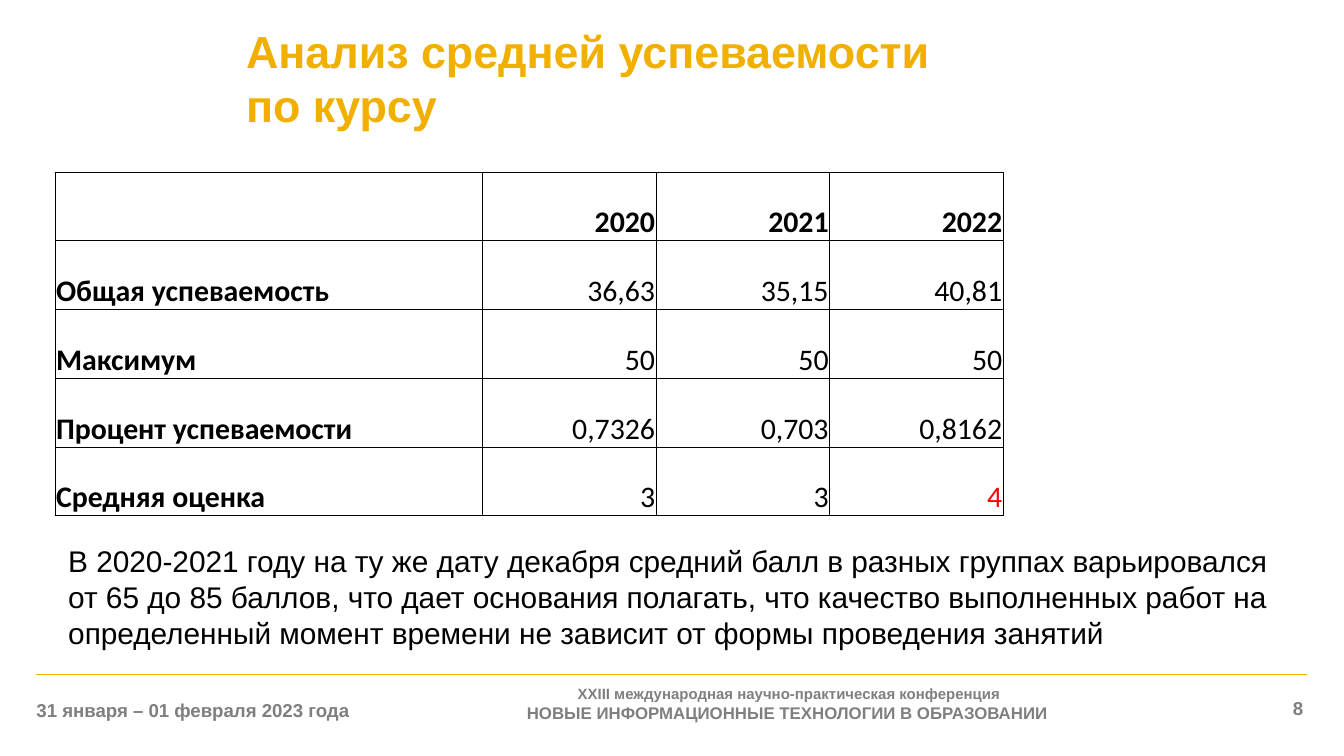
from lxml import etree
from pptx import Presentation
from pptx.dml.color import RGBColor
from pptx.enum.shapes import MSO_CONNECTOR
from pptx.enum.text import MSO_ANCHOR, PP_ALIGN
from pptx.oxml import parse_xml
from pptx.oxml.ns import nsdecls, qn
from pptx.util import Cm, Pt

LEFT, CENTER, RIGHT = PP_ALIGN.LEFT, PP_ALIGN.CENTER, PP_ALIGN.RIGHT
TOP, MIDDLE, BOTTOM = MSO_ANCHOR.TOP, MSO_ANCHOR.MIDDLE, MSO_ANCHOR.BOTTOM
STRAIGHT = MSO_CONNECTOR.STRAIGHT

THEME = {
    "accent": "F1AF00", "text": "000000", "footer": "7F7F7F", "highlight": "FF0000",
    "font": "Arial", "table_font": "Calibri",
    "title_size": 24, "body_size": 16, "footer_size": 10,
    "conference_size": 8, "topic_size": 9,
}


def write(frame, lines, color, font=THEME["font"], bold=False, align=LEFT):
    """Fill one paragraph with (text, size) lines parted by line breaks."""
    paragraph = frame.paragraphs[0]
    paragraph.alignment = align
    for index, (text, size) in enumerate(lines):
        if index:
            paragraph.add_line_break()
        run = paragraph.add_run()
        run.text = text
        for name, value in {"name": font, "size": Pt(size), "bold": bold}.items():
            setattr(run.font, name, value)
        run.font.color.rgb = RGBColor.from_string(color)


def format_frame(frame, anchor, side, vertical):
    values = {
        "word_wrap": True, "vertical_anchor": anchor,
        "margin_left": Cm(side), "margin_right": Cm(side),
        "margin_top": Cm(vertical), "margin_bottom": Cm(vertical),
    }
    for name, value in values.items():
        setattr(frame, name, value)


presentation = Presentation()
presentation.slide_width, presentation.slide_height = Cm(25.4), Cm(14.29)
slide = presentation.slides.add_slide(presentation.slide_layouts[5])

# Footer rule
rule = slide.shapes.add_connector(STRAIGHT, Cm(0.69), Cm(12.75), Cm(24.71), Cm(12.75))
rule.line.color.rgb = RGBColor.from_string(THEME["accent"])
rule.line.width = Pt(0.75)
etree.SubElement(rule._element.spPr, qn("a:effectLst"))

# Title
title = slide.shapes.title
title.left, title.top, title.width, title.height = Cm(4.5), Cm(0.43), Cm(19.2), Cm(2.06)
format_frame(title.text_frame, MIDDLE, 0.15, 0)
title_lines = [(line, THEME["title_size"])
               for line in ("Анализ средней успеваемости ", "по курсу")]
write(title.text_frame, title_lines, THEME["accent"], bold=True)

# Footer: date, conference, slide number
footers = [
    ((0.69, 13.21, 5.99, 0.43), MIDDLE, LEFT,
     [("31 января – 01 февраля 2023 года", THEME["footer_size"])]),
    ((6.71, 12.95, 16.41, 0.74), TOP, CENTER,
     [("XXIII международная научно-практическая конференция", THEME["conference_size"]),
      ("НОВЫЕ ИНФОРМАЦИОННЫЕ ТЕХНОЛОГИИ В ОБРАЗОВАНИИ ", THEME["topic_size"])]),
    ((22.5, 13.18, 2.13, 0.43), TOP, RIGHT, [("8", THEME["footer_size"])]),
]
for box, anchor, align, lines in footers:
    footer = slide.shapes.add_textbox(*map(Cm, box))
    format_frame(footer.text_frame, anchor, 0, 0)
    write(footer.text_frame, lines, THEME["footer"], bold=True, align=align)

# Results table
rows = [
    ("", "2020", "2021", "2022"),
    ("Общая успеваемость", "36,63", "35,15", "40,81"),
    ("Максимум", "50", "50", "50"),
    ("Процент успеваемости", "0,7326", "0,703", "0,8162"),
    ("Средняя оценка", "3", "3", "4"),
]
column_widths = [8.08, 3.28, 3.28, 3.28]
row_height = 1.3
table = slide.shapes.add_table(
    len(rows), len(column_widths), Cm(1.04), Cm(3.25),
    Cm(sum(column_widths)), Cm(row_height * len(rows))).table
table.first_row = table.horz_banding = False
for column, width in zip(table.columns, column_widths):
    column.width = Cm(width)
for row_index, row in enumerate(rows):
    table.rows[row_index].height = Cm(row_height)
    for column_index, text in enumerate(row):
        cell = table.cell(row_index, column_index)
        cell_format = {
            "vertical_anchor": BOTTOM, "margin_left": Cm(0.02),
            "margin_right": Cm(0.02), "margin_top": Cm(0.02), "margin_bottom": 0,
        }
        for name, value in cell_format.items():
            setattr(cell, name, value)
        for side in ("lnL", "lnR", "lnT", "lnB"):
            cell._tc.get_or_add_tcPr().append(parse_xml(
                f'<a:{side} {nsdecls("a")} w="{Pt(0.5)}"><a:solidFill>'
                f'<a:srgbClr val="{THEME["text"]}"/></a:solidFill></a:{side}>'))
        cell.fill.background()
        if text:
            is_last = (row_index, column_index) == (len(rows) - 1, len(row) - 1)
            write(cell.text_frame, [(text, THEME["body_size"])],
                  THEME["highlight" if is_last else "text"], THEME["table_font"],
                  bold=row_index == 0 or column_index == 0,
                  align=RIGHT if column_index else LEFT)

# Conclusion
conclusion = slide.shapes.add_textbox(Cm(1.04), Cm(10.13), Cm(23.72), Cm(2.31))
format_frame(conclusion.text_frame, TOP, 0.25, 0.13)
write(conclusion.text_frame, [(
    "В 2020-2021 году на ту же дату декабря средний балл в разных группах "
    "варьировался от 65 до 85 баллов, что дает основания полагать, что качество "
    "выполненных работ на определенный момент времени не зависит от формы "
    "проведения занятий", THEME["body_size"])], THEME["text"])

presentation.save("out.pptx")
